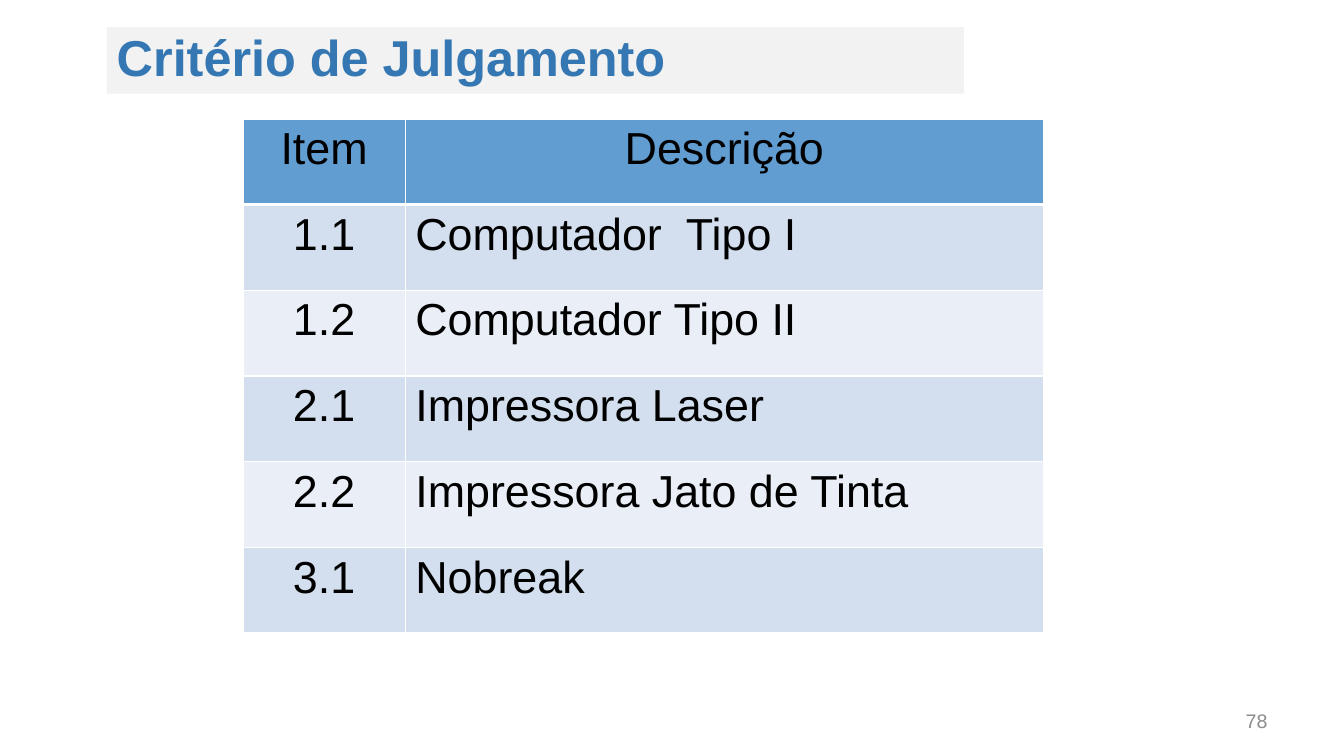
from lxml import etree
from pptx import Presentation
from pptx.dml.color import RGBColor
from pptx.enum.shapes import MSO_SHAPE
from pptx.enum.text import MSO_ANCHOR, PP_ALIGN
from pptx.oxml.ns import qn
from pptx.util import Inches, Pt

RECT = MSO_SHAPE.RECTANGLE
MIDDLE = MSO_ANCHOR.MIDDLE
LEFT, CENTER, RIGHT = PP_ALIGN.LEFT, PP_ALIGN.CENTER, PP_ALIGN.RIGHT

ITEMS = [
    ("Item", "Descrição"),
    ("1.1", "Computador  Tipo I"),
    ("1.2", "Computador Tipo II"),
    ("2.1", "Impressora Laser"),
    ("2.2", "Impressora Jato de Tinta"),
    ("3.1", "Nobreak"),
]
WIDTHS = (1.61, 6.33)
ROW = 0.85
HEAD, ODD, EVEN = "629DD1", "D3DFEE", "EAEFF7"


def color(text):
    return RGBColor.from_string(text)


def border(cell, top, bottom):
    """Draw white cell borders; top and bottom are widths in points."""
    props = cell._tc.get_or_add_tcPr()
    for side, width in (("L", 1), ("R", 1), ("T", top), ("B", bottom)):
        line = etree.SubElement(props, qn("a:ln" + side), w=str(Pt(width)))
        fill = etree.SubElement(line, qn("a:solidFill"))
        etree.SubElement(fill, qn("a:srgbClr"), val="FFFFFF")


class Page:
    font = "Arial"

    def __init__(self, slide):
        self.slide = slide

    def label(self, frame, text, size, ink, align=LEFT, bold=False):
        """Put one styled paragraph in the frame and return it."""
        frame.text = text
        par = frame.paragraphs[0]
        par.alignment = align
        font = par.runs[0].font
        font.name, font.size, font.bold = self.font, Pt(size), bold
        font.color.rgb = color(ink)
        return par

    def title(self, text, *box):
        shape = self.slide.shapes.add_shape(RECT, *map(Inches, box))
        shape.shadow.inherit = False
        shape.fill.solid()
        shape.fill.fore_color.rgb = color("F2F2F2")
        shape.line.fill.background()
        shape.text_frame.vertical_anchor = MIDDLE
        par = self.label(shape.text_frame, text, 36, "3477B2", bold=True)
        par.line_spacing = 0.9

    def number(self, text, *box):
        frame = self.slide.shapes.add_textbox(*map(Inches, box)).text_frame
        frame.word_wrap = True
        frame.vertical_anchor = MIDDLE
        self.label(frame, text, 14, "8C8C8C", RIGHT)

    def table(self, items, left, top):
        box = map(Inches, (left, top, sum(WIDTHS), ROW * len(items)))
        table = self.slide.shapes.add_table(len(items), len(WIDTHS), *box).table
        for col, width in zip(table.columns, WIDTHS):
            col.width = Inches(width)
        for r, texts in enumerate(items):
            table.rows[r].height = Inches(ROW)
            shade = HEAD if r == 0 else ODD if r % 2 else EVEN
            for c, text in enumerate(texts):
                cell = table.cell(r, c)
                border(cell, 3 if r == 1 else 1, 3 if r == 0 else 1)
                cell.fill.solid()
                cell.fill.fore_color.rgb = color(shade)
                align = CENTER if r == 0 or c == 0 else LEFT
                self.label(cell.text_frame, text, 32, "000000", align)


def main():
    deck = Presentation()
    deck.slide_width, deck.slide_height = Inches(13.33), Inches(7.5)
    page = Page(deck.slides.add_slide(deck.slide_layouts[6]))
    page.title("Critério de Julgamento", 1.06, 0.27, 8.5, 0.66)
    page.number("78", 9.56, 6.95, 3.11, 0.4)
    page.table(ITEMS, 2.41, 1.18)
    deck.save("out.pptx")


if __name__ == "__main__":
    main()
